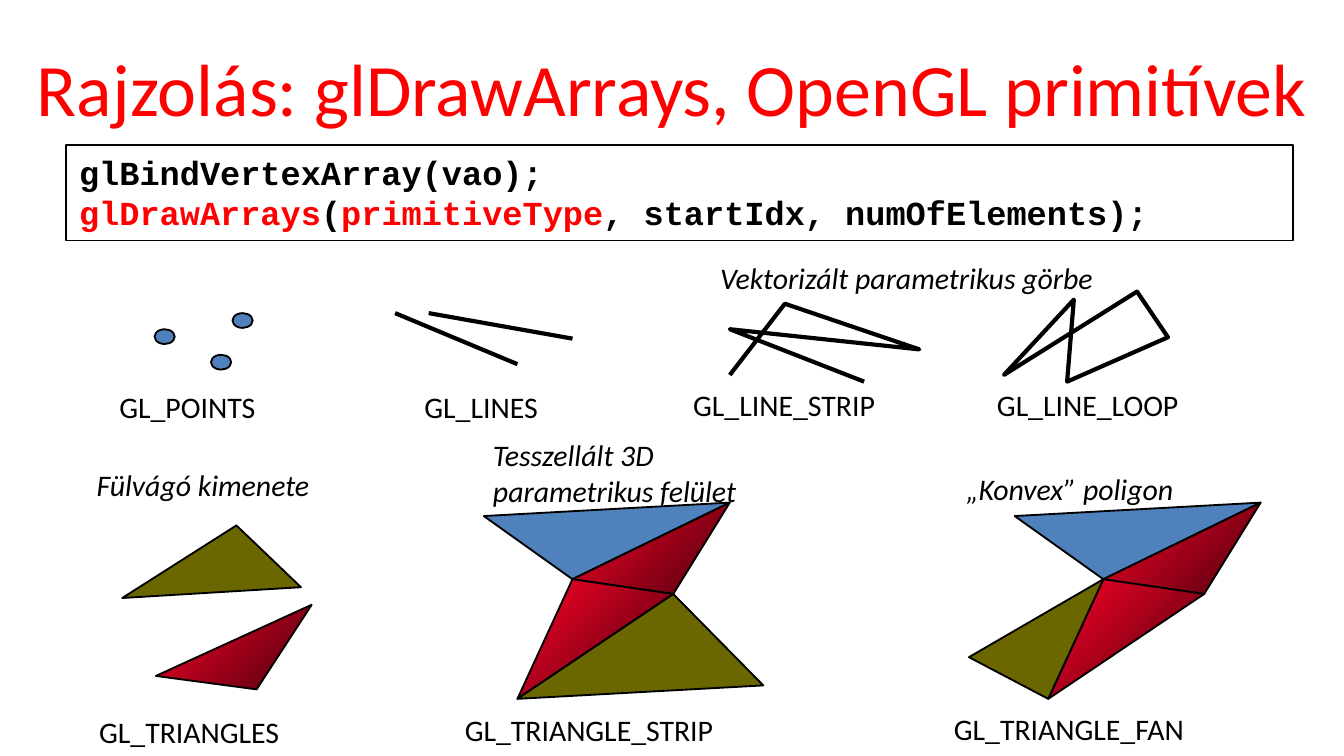
"""Build a slide on glDrawArrays and the OpenGL primitive types."""
from pptx import Presentation
from pptx.dml.color import RGBColor
from pptx.enum.lang import MSO_LANGUAGE_ID
from pptx.enum.shapes import MSO_CONNECTOR, MSO_SHAPE
from pptx.enum.text import MSO_ANCHOR, PP_ALIGN
from pptx.oxml.ns import qn
from pptx.util import Inches, Pt
from lxml.etree import SubElement

BLACK = RGBColor(0x00, 0x00, 0x00)
RED = RGBColor(0xFF, 0x00, 0x00)
BLUE = RGBColor(0x4F, 0x81, 0xBD)
OLIVE = RGBColor(0x6A, 0x67, 0x00)
CRIMSON = RGBColor(0xFC, 0x01, 0x28)
MAROON = RGBColor(0x4B, 0x00, 0x0C)
GRADIENT = (CRIMSON, MAROON)

TITLE = "Rajzolás: glDrawArrays, OpenGL primitívek"
CODE = [
    [("glBindVertexArray(vao);", BLACK)],
    [("glDrawArrays", RED), ("(", BLACK), ("primitiveType", RED),
     (", startIdx, numOfElements);", BLACK)],
]
LABELS = [
    ("GL_POINTS", 0.79, 2.84, 1.23),
    ("GL_LINES", 3.06, 2.84, 1.06),
    ("GL_LINE_STRIP", 5.06, 2.83, 1.57),
    ("GL_LINE_LOOP", 7.32, 2.83, 1.57),
    ("GL_TRIANGLE_STRIP", 3.36, 5.25, 2.08),
    ("GL_TRIANGLES", 0.64, 5.26, 1.56),
    ("GL_TRIANGLE_FAN", 7, 5.24, 1.94),
]
NOTES = [
    ("Vektorizált parametrikus görbe", 5.26, 1.88, 3.01),
    ("Tesszellált 3D\nparametrikus felület", 3.57, 3.2, 2.03),
    ("„Konvex” poligon", 7.09, 3.45, 1.77),
    ("Fülvágó kimenete", 0.62, 3.42, 1.8),
]
POINTS = [(1.15, 2.45), (1.73, 2.33), (1.57, 2.64)]
LINES = [((2.94, 2.33), (3.85, 2.71)), ((3.19, 2.33), (4.26, 2.52))]
LINE_STRIP = [(5.43, 2.79), (5.84, 2.26), (6.84, 2.6), (5.43, 2.45), (6.43, 2.84)]
LINE_LOOP = [(7.99, 2.23), (7.47, 2.79), (8.46, 2.17), (8.69, 2.51), (7.94, 2.84)]

HUB, LEFT, TOP, RIGHT, BOTTOM = (0.66, 0.57), (0, 0.1), (1.83, 0), (1.41, 0.68), (0.25, 1.46)
SHARED = [
    ((HUB, LEFT, TOP), BLUE),
    ((HUB, RIGHT, TOP), GRADIENT),
    ((HUB, RIGHT, BOTTOM), GRADIENT),
]
STRIP = SHARED + [(((2.08, 1.36), RIGHT, BOTTOM), OLIVE)]
FAN = SHARED + [(((-0.34, 1.15), HUB, BOTTOM), OLIVE)]
TRIANGLES = [
    (((2.24, 4.37), (1.76, 3.91), (0.91, 4.45)), OLIVE),
    (((1.16, 5.03), (1.91, 5.13), (2.32, 4.5)), GRADIENT),
]


def style(sp, fill=None, width=1):
    sp.shadow.inherit = False
    sp.line.color.rgb = BLACK
    sp.line.width = Pt(width)
    if fill is None:
        sp.fill.background()
    elif fill is GRADIENT:
        sp.fill.gradient()
        sp.fill.gradient_angle = 315
        for stop, color in zip(sp.fill.gradient_stops, fill):
            stop.color.rgb = color
    else:
        sp.fill.solid()
        sp.fill.fore_color.rgb = fill


def add_path(shapes, points, closed, fill=None, width=1, dx=0, dy=0):
    pts = [(Inches(x + dx), Inches(y + dy)) for x, y in points]
    builder = shapes.build_freeform(*pts[0])
    builder.add_line_segments(pts[1:], close=closed)
    style(builder.convert_to_shape(), fill, width)


def add_mesh(s, mesh, dx, dy):
    group = s.shapes.add_group_shape()
    for points, fill in mesh:
        add_path(group.shapes, points, True, fill, dx=dx, dy=dy)


def format_run(r, size, color=BLACK, name="Calibri"):
    r.font.size = Pt(size)
    r.font.name = name
    r.font.color.rgb = color
    r.font.language_id = MSO_LANGUAGE_ID.HUNGARIAN


def add_text(s, text, x, y, w, h, size=16, color=BLACK, italic=None, wrap=False):
    tf = s.shapes.add_textbox(Inches(x), Inches(y), Inches(w), Inches(h)).text_frame
    tf.word_wrap = wrap
    tf.text = text
    for p in tf.paragraphs:
        for r in p.runs:
            format_run(r, size, color)
            r.font.italic = italic
    return tf


def add_code(s):
    sp = s.shapes.add_shape(MSO_SHAPE.RECTANGLE, Inches(0.49), Inches(1.08),
                            Inches(9.13), Inches(0.71))
    style(sp)
    tf = sp.text_frame
    tf.vertical_anchor = MSO_ANCHOR.TOP
    for i, parts in enumerate(CODE):
        p = tf.add_paragraph() if i else tf.paragraphs[0]
        p.alignment = PP_ALIGN.LEFT
        for text, color in parts:
            r = p.add_run()
            r.text = text
            format_run(r, 18, color, "Courier New")
            r.font.bold = True


def main():
    prs = Presentation()
    prs.slide_width = Inches(10)
    prs.slide_height = prs.slide_width * 9 // 16
    s = prs.slides.add_slide(prs.slide_layouts[6])

    tf = add_text(s, TITLE, 0, 0.18, 10, 0.94, 39.6, RED, wrap=True)
    tf.vertical_anchor = MSO_ANCHOR.MIDDLE
    tf.paragraphs[0].alignment = PP_ALIGN.CENTER

    for x, y in POINTS:
        style(s.shapes.add_shape(MSO_SHAPE.OVAL, Inches(x), Inches(y),
                                 Inches(0.15), Inches(0.11)), BLUE)
    for start, end in LINES:
        line = s.shapes.add_connector(MSO_CONNECTOR.STRAIGHT, *map(Inches, start + end))
        line.line.color.rgb = BLACK
        line.line.width = Pt(2.25)
        SubElement(line._element.spPr, qn("a:effectLst"))
    add_path(s.shapes, LINE_STRIP, False, width=2.25)
    add_path(s.shapes, LINE_LOOP, True, width=2.25)

    add_mesh(s, STRIP, 3.6, 3.74)
    for points, fill in TRIANGLES:
        add_path(s.shapes, points, True, fill)
    add_mesh(s, FAN, 7.55, 3.74)

    for text, x, y, w in LABELS:
        add_text(s, text, x, y, w, 0.37)
    add_code(s)
    for text, x, y, w in NOTES:
        add_text(s, text, x, y, w, 0.37 + 0.27 * text.count("\n"), italic=True)
    prs.save("out.pptx")


if __name__ == "__main__":
    main()
